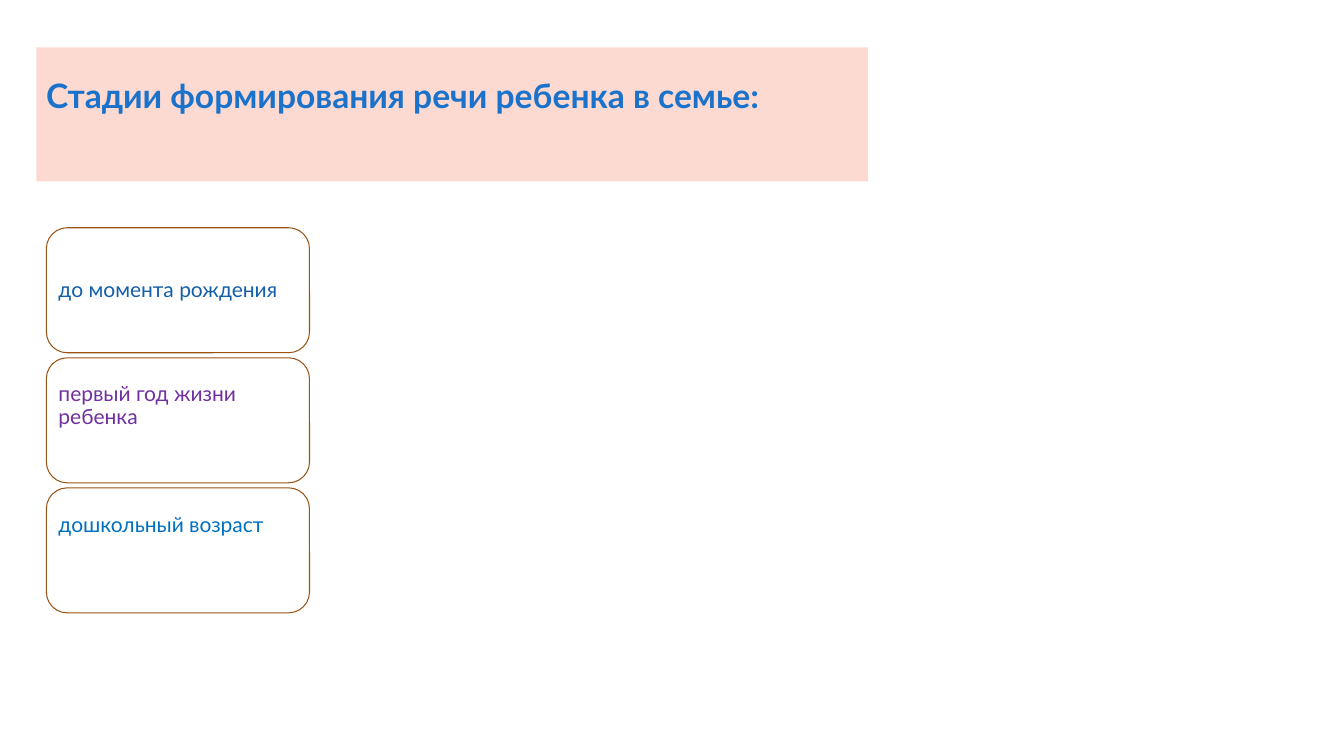
from pptx import Presentation
from pptx.dml.color import RGBColor
from pptx.enum.shapes import MSO_SHAPE
from pptx.enum.text import MSO_ANCHOR, PP_ALIGN
from pptx.util import Inches, Pt

RECTANGLE, ROUNDED = MSO_SHAPE.RECTANGLE, MSO_SHAPE.ROUNDED_RECTANGLE
MIDDLE, BOTTOM = MSO_ANCHOR.MIDDLE, MSO_ANCHOR.BOTTOM
LEFT = PP_ALIGN.LEFT

PINK = RGBColor(0xFC, 0xDA, 0xD2)
BROWN = RGBColor(0x9A, 0x53, 0x15)
TITLE_BLUE = RGBColor(0x1A, 0x72, 0xCB)
DARK_BLUE = RGBColor(0x14, 0x5F, 0xAA)
PURPLE = RGBColor(0x70, 0x30, 0xA0)
BRIGHT_BLUE = RGBColor(0x00, 0x70, 0xC0)
FONT = "Lato"

# Content: stage, colour, extra room below the text in inches
TITLE = "Стадии формирования речи ребенка в семье:"
STAGES = [
    ("до момента рождения", DARK_BLUE, 0),
    ("первый год жизни ребенка", PURPLE, 0.28),
    ("дошкольный возраст", BRIGHT_BLUE, 0.48),
]

# Stage column, in inches
STAGE_LEFT, STAGE_TOP = 0.46, 2.26
STAGE_WIDTH, STAGE_HEIGHT = 2.61, 1.24
STAGE_PITCH = 1.29
STAGE_INSET = 0.06


def add_panel(slide, kind, box, text, size, color, anchor, insets):
    panel = slide.shapes.add_shape(kind, *(Inches(v) for v in box))
    panel.shadow.inherit = False
    frame = panel.text_frame
    frame.word_wrap = True
    frame.vertical_anchor = anchor
    (frame.margin_left, frame.margin_top,
     frame.margin_right, frame.margin_bottom) = (Inches(v) for v in insets)
    frame.text = text
    paragraph = frame.paragraphs[0]
    paragraph.alignment = LEFT
    paragraph.line_spacing = 0.9
    font = paragraph.runs[0].font
    font.name, font.size, font.color.rgb = FONT, Pt(size), color
    return panel


prs = Presentation()
prs.slide_width, prs.slide_height = Inches(13.33), Inches(7.5)
slide = prs.slides.add_slide(prs.slide_layouts[6])

# Title band
title = add_panel(slide, RECTANGLE, (0.36, 0.47, 8.25, 1.33), TITLE, 24,
                  TITLE_BLUE, BOTTOM, (0.1, 0.05, 0.1, 0.65))
title.fill.solid()
title.fill.fore_color.rgb = PINK
title.line.fill.background()
title.text_frame.paragraphs[0].runs[0].font.bold = True

# Stages
for row, (stage_text, color, room) in enumerate(STAGES):
    box = (STAGE_LEFT, STAGE_TOP + row * STAGE_PITCH, STAGE_WIDTH, STAGE_HEIGHT)
    insets = (STAGE_INSET, STAGE_INSET, STAGE_INSET, STAGE_INSET + room)
    stage = add_panel(slide, ROUNDED, box, stage_text, 15, color, MIDDLE, insets)
    stage.fill.background()
    stage.line.color.rgb = BROWN
    stage.line.width = Pt(0.75)

prs.save("out.pptx")
